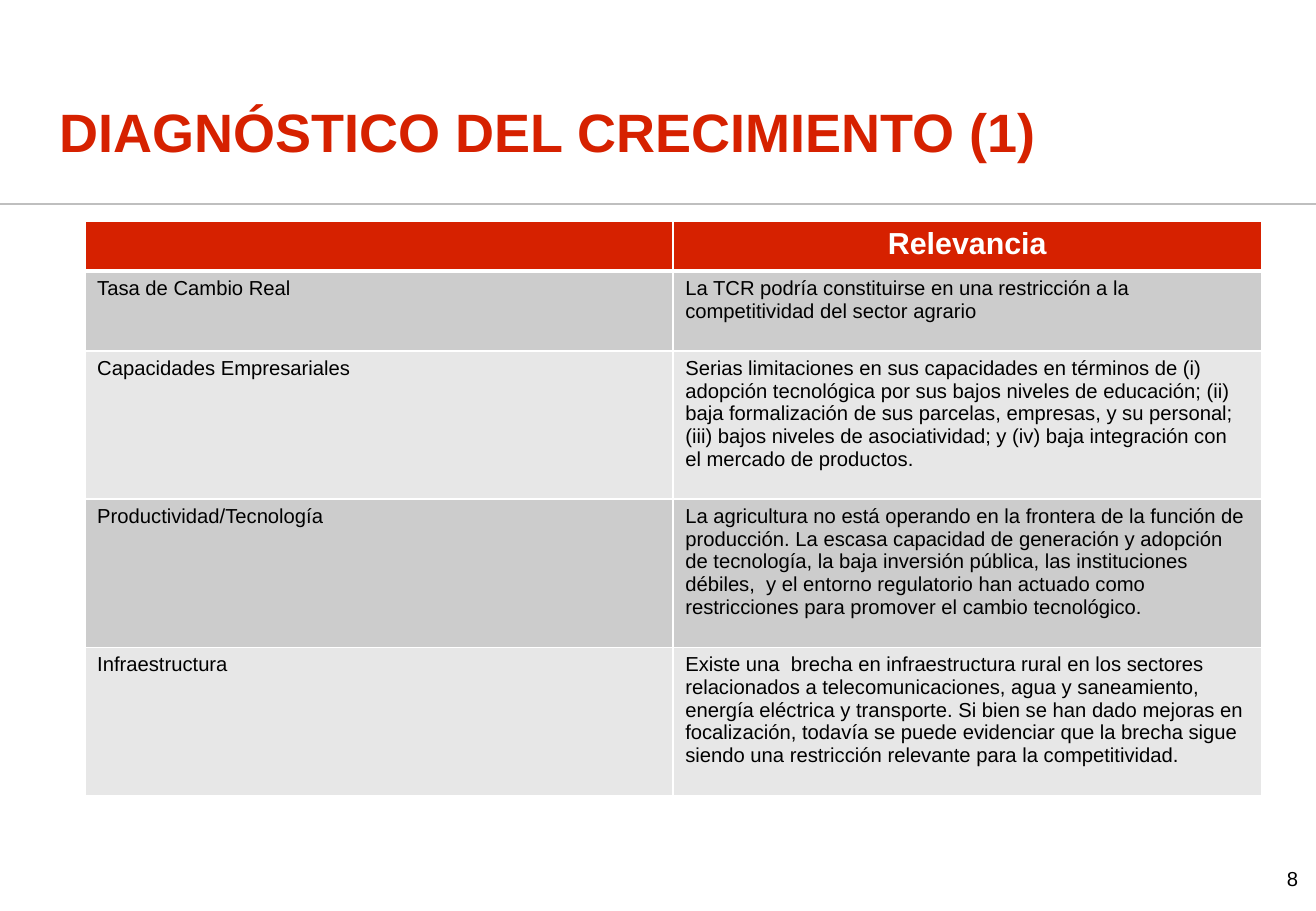
"""Builds the growth diagnosis slide with its relevance table."""
import pptx
import pptx.util
import pptx.dml.color
import pptx.enum.shapes
import pptx.enum.text
import pptx.oxml
import pptx.oxml.ns

ALIGN = pptx.enum.text.PP_ALIGN
ANCHOR = pptx.enum.text.MSO_ANCHOR
COLORS = {"red": "D62100", "white": "FFFFFF", "black": "000000",
          "rule": "BFBFBF", "dark": "CCCCCC", "light": "E7E7E7"}
ROWS = [
    ("", "Relevancia"),
    ("Tasa de Cambio Real",
     "La TCR podría constituirse en una restricción a la competitividad del sector agrario"),
    ("Capacidades Empresariales",
     "Serias limitaciones en sus capacidades en términos de (i) adopción tecnológica por sus "
     "bajos niveles de educación; (ii)  baja formalización de sus parcelas, empresas, y su "
     "personal; (iii) bajos niveles de asociatividad; y (iv) baja integración con el mercado "
     "de productos."),
    ("Productividad/Tecnología",
     "La agricultura no está operando en la frontera de la función de producción. La escasa "
     "capacidad de generación y adopción de tecnología, la baja inversión pública, las "
     "instituciones débiles,  y el entorno regulatorio han actuado como restricciones para "
     "promover el cambio tecnológico."),
    ("Infraestructura",
     "Existe una  brecha en infraestructura rural en los sectores relacionados a "
     "telecomunicaciones, agua y saneamiento, energía eléctrica y transporte. Si bien se han "
     "dado mejoras en focalización, todavía se puede evidenciar que la brecha sigue siendo "
     "una restricción relevante para la competitividad."),
]
HEIGHTS = [41, 66, 122, 122, 122]


class Deck:
    """Holds the style and the current slide."""

    font = "Arial"
    scale = 9144

    def __init__(self, width, height):
        """Start a presentation with one blank slide."""
        self.prs = pptx.Presentation()
        self.prs.slide_width, self.prs.slide_height = self.px(width, height)
        self.s = self.prs.slides.add_slide(self.prs.slide_layouts[6])

    def px(self, *lengths):
        """Turn px into EMU."""
        return [pptx.util.Emu(n * self.scale) for n in lengths]

    def rgb(self, color):
        """Look up a named colour."""
        return pptx.dml.color.RGBColor.from_string(COLORS[color])

    def fill_text(self, tf, text, size, color, bold=False, align=ALIGN.LEFT):
        """Fill a text frame with one styled paragraph."""
        tf.text = text
        tf.word_wrap = True
        p = tf.paragraphs[0]
        p.alignment = align
        for font in [p.font] + [r.font for r in p.runs]:
            font.name, font.size, font.bold = self.font, pptx.util.Pt(size), bold
            font.color.rgb = self.rgb(color)

    def line(self, x1, y1, x2, y2, color, width):
        """Draw a straight line."""
        sp = self.s.shapes.add_connector(
            pptx.enum.shapes.MSO_CONNECTOR.STRAIGHT, *self.px(x1, y1, x2, y2))
        sp.line.color.rgb = self.rgb(color)
        sp.line.width = pptx.util.Pt(width)
        sp._element.spPr.append(pptx.oxml.parse_xml(
            f"<a:effectLst {pptx.oxml.ns.nsdecls('a')}/>"))

    def text(self, box, text, size, color, inset=(10, 5), anchor=ANCHOR.TOP, fill=None, **style):
        """Place a text box."""
        sp = self.s.shapes.add_textbox(*self.px(*box))
        if fill:
            sp.fill.solid()
            sp.fill.fore_color.rgb = self.rgb(fill)
        tf = sp.text_frame
        self.fill_text(tf, text, size, color, **style)
        tf.margin_left, tf.margin_top = self.px(*inset)
        tf.vertical_anchor = anchor

    def borders(self, cell, **widths):
        """Draw white cell borders, given in points."""
        tcPr = cell._tc.get_or_add_tcPr()
        for i, side in enumerate("LRTB"):
            width = pptx.util.Pt(widths.get(side, 1))
            tcPr.insert(i, pptx.oxml.parse_xml(
                f'<a:ln{side} {pptx.oxml.ns.nsdecls("a")} w="{width}"><a:solidFill>'
                f'<a:srgbClr val="{COLORS["white"]}"/></a:solidFill></a:ln{side}>'))

    def table(self, x, y, width, heights, rows):
        """Build a table with a header row and banded body rows."""
        box = self.px(x, y, width, sum(heights))
        table = self.s.shapes.add_table(len(rows), len(rows[0]), *box).table
        for i, (row, height) in enumerate(zip(rows, heights)):
            table.rows[i].height = self.px(height)[0]
            for j, text in enumerate(row):
                cell = table.cell(i, j)
                cell.fill.solid()
                if i == 0:
                    cell.fill.fore_color.rgb = self.rgb("red")
                    self.fill_text(cell.text_frame, text, 18, "white", True, ALIGN.CENTER)
                    self.borders(cell, B=3)
                else:
                    cell.fill.fore_color.rgb = self.rgb("dark" if i % 2 else "light")
                    self.fill_text(cell.text_frame, text, 12, "black")
                    self.borders(cell, T=3 if i == 1 else 1)


def main():
    """Build and save the slide."""
    deck = Deck(1083, 750)
    deck.line(0, 168, 1083, 168, "rule", 1.5)
    deck.text((42, 71, 945, 86), "DIAGNÓSTICO DEL CRECIMIENTO (1)", 32, "red",
              inset=(7, 10), fill="white", bold=True)
    deck.text((1033, 703, 45, 40), "8", 12, "black", anchor=ANCHOR.MIDDLE, align=ALIGN.RIGHT)
    deck.table(70, 182, 968, HEIGHTS, ROWS)
    deck.prs.save("out.pptx")


if __name__ == "__main__":
    main()
